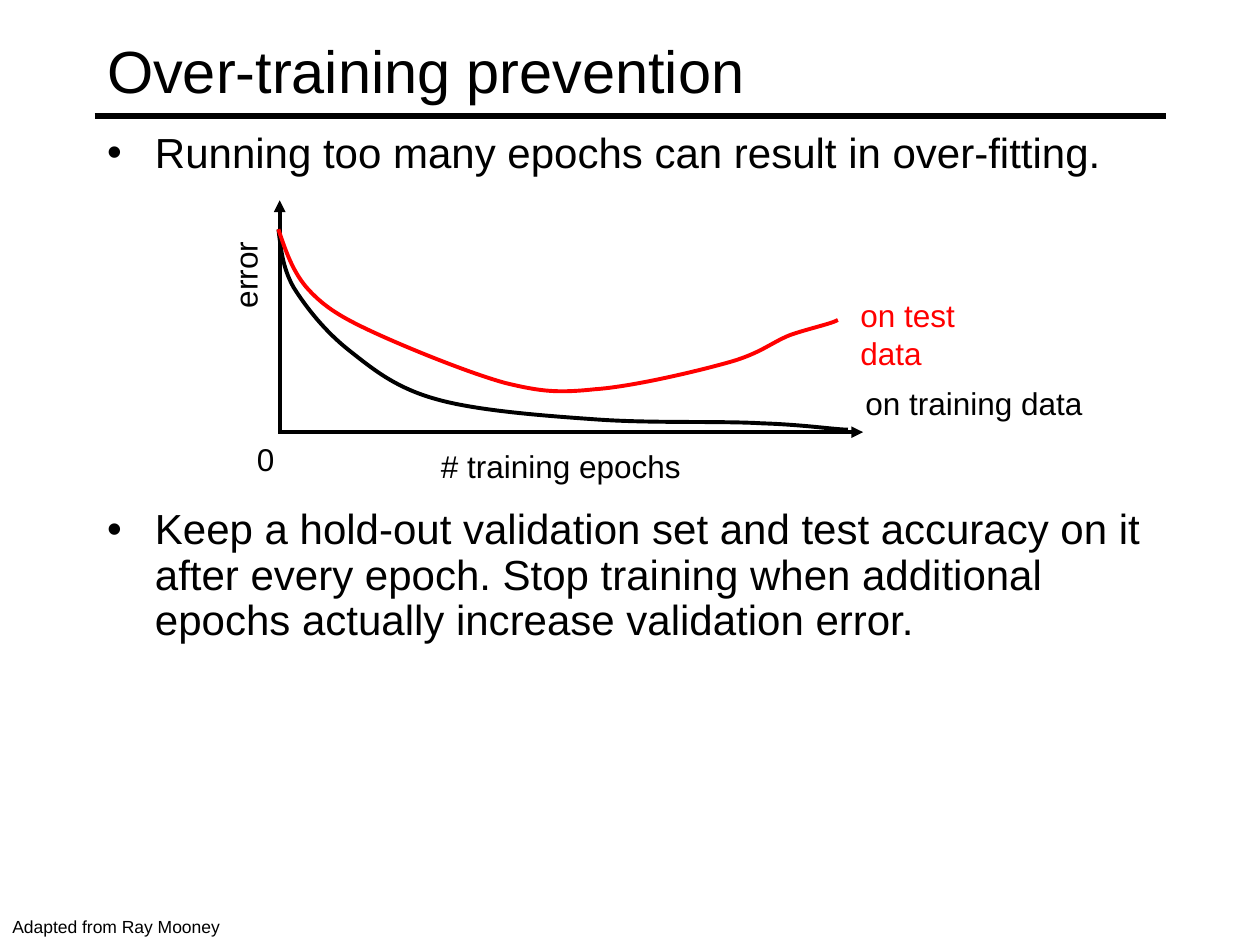
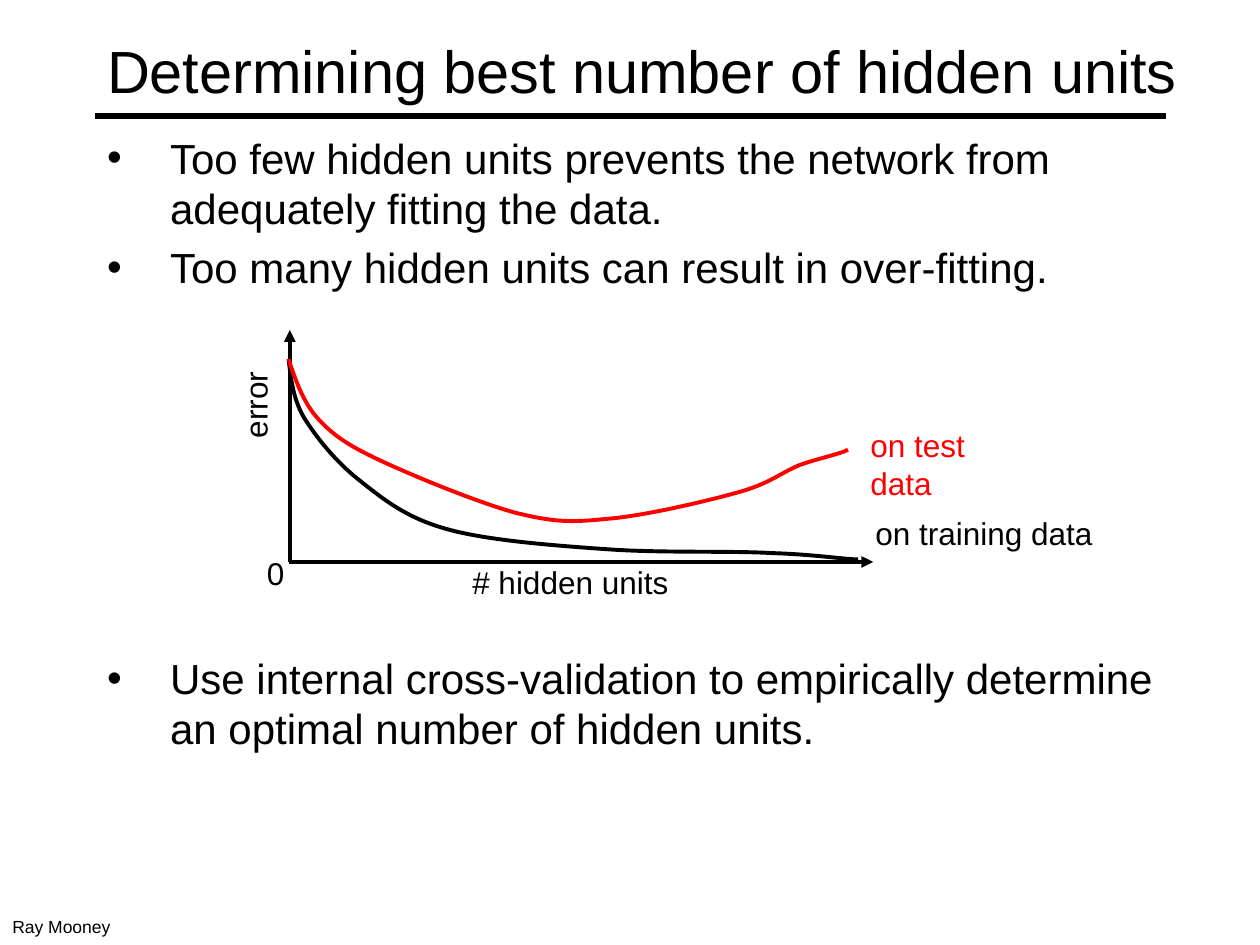
import pptx
import pptx.dml.color
import pptx.enum.shapes
import pptx.enum.text
import pptx.oxml
import pptx.oxml.ns
import pptx.util
from pptx.util import Inches

FONT = "Arial"
BLACK, RED = "000000", "FF0000"
TITLE_SIZE, BODY_SIZE, LABEL_SIZE, CREDIT_SIZE = 34, 24, 18, 10
PLOT_LINE = 2.25
SPACE_BEFORE = 4.8

# Content: each bullet is (text, points of space before it)
SLIDES = [
    {
        "title": "Over-training prevention",
        "title_width": 8.5,
        "bullets": [
            ("Running too many epochs can result in over-fitting.", SPACE_BEFORE),
            ("Keep a hold-out validation set and test accuracy on it after every "
             "epoch. Stop training when additional epochs actually increase "
             "validation error.", 189),
        ],
        "body_height": 6.06, "indent": 0.38, "line_spacing": 0.9,
        "origin": (2.21, 3.43),
        "zero_offset": 0.01,
        "x_label": ("# training epochs", 1.19, 0.07, 2.11),
        "credit": ("Adapted from Ray Mooney", 1.9),
    },
    {
        "title": "Determining best number of hidden units",
        "title_width": 8.74,
        "bullets": [
            ("Too few hidden units prevents the network from adequately fitting "
             "the data.", SPACE_BEFORE),
            ("Too many hidden units can result in over-fitting.", SPACE_BEFORE),
            ("Use internal cross-validation to empirically determine an optimal "
             "number of hidden units.", 206),
        ],
        "body_height": 5.75, "indent": 0.5, "line_spacing": 1.0,
        "origin": (2.29, 4.46),
        "zero_offset": -0.11,
        "x_label": ("# hidden units", 1.36, -0.04, 1.77),
        "credit": ("Ray Mooney", 0.99),
    },
]

# Bezier points of the error curves, in inches from their common start:
# each row holds two control points and the end of one segment
CURVE_START_HEIGHT = 1.61
TRAINING_CURVE = [
    (0.02, 0.15), (0.03, 0.3), (0.12, 0.46),
    (0.22, 0.62), (0.37, 0.81), (0.56, 0.96),
    (0.75, 1.11), (0.93, 1.26), (1.26, 1.35),
    (1.58, 1.44), (2.11, 1.48), (2.54, 1.51),
    (2.97, 1.54), (3.51, 1.52), (3.84, 1.54),
    (4.17, 1.55), (4.42, 1.59), (4.52, 1.59),
]
TEST_CURVE = [
    (0.06, 0.18), (0.12, 0.35), (0.24, 0.48),
    (0.37, 0.62), (0.5, 0.7), (0.76, 0.82),
    (1.02, 0.94), (1.51, 1.14), (1.8, 1.22),
    (2.09, 1.29), (2.22, 1.3), (2.51, 1.27),
    (2.8, 1.25), (3.31, 1.13), (3.56, 1.06),
    (3.82, 0.99), (3.91, 0.9), (4.06, 0.84),
    (4.2, 0.79), (4.39, 0.75), (4.44, 0.72),
]


def rgb(color):
    return pptx.dml.color.RGBColor.from_string(color)


def style_font(paragraph, size, color=BLACK):
    paragraph.font.name = FONT
    paragraph.font.size = pptx.util.Pt(size)
    paragraph.font.color.rgb = rgb(color)


def style_line(shape, color, width):
    shape.line.color.rgb = rgb(color)
    shape.line.width = pptx.util.Pt(width)


def place(shape, left, top, width, height):
    shape.left, shape.top = Inches(left), Inches(top)
    shape.width, shape.height = Inches(width), Inches(height)


def make_element(tag, **attributes):
    element = pptx.oxml.parse_xml(f"<{tag} {pptx.oxml.ns.nsdecls('a')}/>")
    for name, value in attributes.items():
        element.set(name, value)
    return element


def add_line(shapes, start, end, width, arrow=False):
    connector = shapes.add_connector(
        pptx.enum.shapes.MSO_CONNECTOR.STRAIGHT,
        *(Inches(value) for value in (*start, *end)))
    style_line(connector, BLACK, width)
    properties = connector._element.spPr
    if arrow:
        line = properties.find(pptx.oxml.ns.qn("a:ln"))
        line.append(make_element("a:tailEnd", type="triangle"))
    properties.append(make_element("a:effectLst"))


def add_label(shapes, text, left, top, width, height=0.43, size=LABEL_SIZE,
              color=BLACK, rotation=0, wrap=False):
    box = shapes.add_textbox(*(Inches(value) for value in (left, top, width, height)))
    box.rotation = rotation
    box.text_frame.word_wrap = wrap
    paragraph = box.text_frame.paragraphs[0]
    paragraph.text = text
    style_font(paragraph, size, color)


def bend_segments(shape):
    """Turn every three straight segments of a freeform into one Bezier segment."""
    segments = list(shape._element.iter(pptx.oxml.ns.qn("a:lnTo")))
    for first in range(0, len(segments), 3):
        bezier = make_element("a:cubicBezTo")
        segments[first].addprevious(bezier)
        for segment in segments[first:first + 3]:
            bezier.append(segment[0])
            segment.getparent().remove(segment)


def add_curve(shapes, points, left, top, color):
    builder = shapes.build_freeform(Inches(left), Inches(top))
    builder.add_line_segments(
        [(Inches(left + x), Inches(top + y)) for x, y in points], close=False)
    curve = builder.convert_to_shape()
    bend_segments(curve)
    curve.fill.background()
    curve.shadow.inherit = False
    style_line(curve, color, PLOT_LINE)


def add_error_plot(slide, content):
    shapes = slide.shapes.add_group_shape().shapes
    left, base = content["origin"]

    # Axes and their labels
    add_line(shapes, (left + 0.01, base), (left + 0.01, base - 1.84), PLOT_LINE, arrow=True)
    add_line(shapes, (left, base), (left + 4.64, base), PLOT_LINE, arrow=True)
    text, across, down, width = content["x_label"]
    add_label(shapes, text, left + across, base + down, width)
    add_label(shapes, "0", left - 0.27, base + content["zero_offset"], 0.34)
    add_label(shapes, "error", left - 0.62, base - 1.47, 0.74, rotation=270)

    # Curves and their names
    add_label(shapes, "on training data", left + 4.56, base - 0.43, 1.94)
    add_label(shapes, "on test data", left + 4.52, base - 1.13, 1.46, color=RED, wrap=True)
    for points, color in ((TRAINING_CURVE, BLACK), (TEST_CURVE, RED)):
        add_curve(shapes, points, left, base - CURVE_START_HEIGHT, color)


def fill_title(slide, content):
    title = slide.shapes.title
    place(title, 0.75, 0.09, content["title_width"], 0.92)
    frame = title.text_frame
    frame.text = content["title"]
    frame.auto_size = pptx.enum.text.MSO_AUTO_SIZE.NONE
    frame.vertical_anchor = pptx.enum.text.MSO_ANCHOR.MIDDLE
    frame.paragraphs[0].alignment = pptx.enum.text.PP_ALIGN.LEFT
    style_font(frame.paragraphs[0], TITLE_SIZE)


def fill_body(slide, content):
    body = slide.placeholders[1]
    place(body, 0.75, 1, 8.5, content["body_height"])
    frame = body.text_frame
    frame.auto_size = pptx.enum.text.MSO_AUTO_SIZE.NONE
    frame.text = "\n".join(text for text, _ in content["bullets"])
    indent = Inches(content["indent"])
    for paragraph, (_, space) in zip(frame.paragraphs, content["bullets"]):
        style_font(paragraph, BODY_SIZE)
        paragraph.line_spacing = content["line_spacing"]
        paragraph.space_before = pptx.util.Pt(space)
        properties = paragraph._p.get_or_add_pPr()
        properties.set("marL", str(indent))
        properties.set("indent", str(-indent))
        properties.append(make_element("a:buChar", char="•"))


def add_slide(presentation, content):
    slide = presentation.slides.add_slide(presentation.slide_layouts[1])
    fill_title(slide, content)
    add_line(slide.shapes, (0.75, 0.92), (9.25, 0.92), 3)
    fill_body(slide, content)
    add_error_plot(slide, content)
    text, width = content["credit"]
    add_label(slide.shapes, text, 0, 7.22, width, 0.27, CREDIT_SIZE)


def main():
    presentation = pptx.Presentation()
    presentation.slide_width, presentation.slide_height = Inches(10), Inches(7.5)
    for content in SLIDES:
        add_slide(presentation, content)
    presentation.save("out.pptx")


if __name__ == "__main__":
    main()
